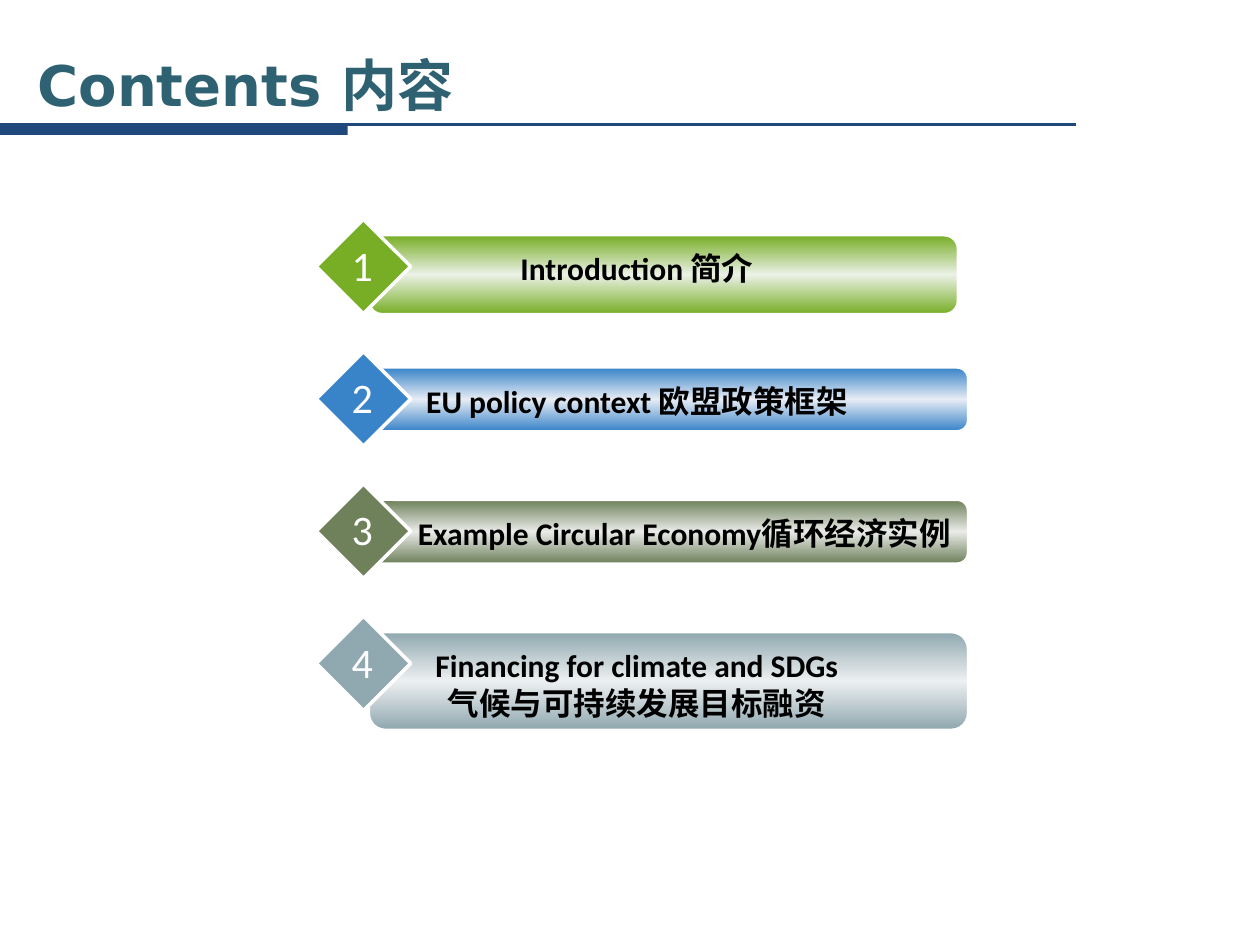
"""Build a contents slide with four numbered, colour-coded bars."""
from copy import deepcopy
from dataclasses import dataclass

from lxml.etree import SubElement
from pptx import Presentation
from pptx.dml.color import RGBColor
from pptx.enum.shapes import MSO_CONNECTOR as Conn, MSO_SHAPE as Shape
from pptx.enum.text import MSO_ANCHOR as Anchor, MSO_AUTO_SIZE as Fit, PP_ALIGN as Align
from pptx.oxml.ns import qn
from pptx.shapes.autoshape import Shape as AutoShape
from pptx.shapes.shapetree import GroupShapes, SlideShapes
from pptx.util import Inches, Pt


@dataclass(frozen=True)
class Theme:
    rule: str = "1F497D"
    title: str = "2E6272"
    ink: str = "000000"
    paper: str = "FFFFFF"
    title_font: str = "DejaVu Sans"
    body_font: str = "Calibri"
    title_size: int = 32
    number_size: int = 24
    label_size: int = 18


@dataclass(frozen=True)
class Style:
    font: str
    size: int
    color: str
    bold: bool = False


@dataclass(frozen=True)
class Topic:
    lines: tuple[str, ...]
    color: str
    glow: str
    bar_width: float = 4.75
    bar_height: float = 0.5
    label_width: float = 3.75
    label_height: float = 0.4


THEME = Theme()
TITLE = Style(THEME.title_font, THEME.title_size, THEME.title, True)
LABEL = Style(THEME.body_font, THEME.label_size, THEME.ink, True)
NUMBER = Style(THEME.body_font, THEME.number_size, THEME.paper)
FIRST_TOP, ROW_STEP = 1.74, 1.05
TOPICS = (
    Topic(("Introduction 简介",), "77AE26", "EBF1E6", bar_width=4.67, bar_height=0.62),
    Topic(("EU policy context 欧盟政策框架",), "3984C9", "E7ECF5"),
    Topic(("Example Circular Economy循环经济实例",), "6E815B", "EAEBE8", label_width=4.5),
    Topic(("Financing for climate and SDGs", "气候与可持续发展目标融资"),
          "90A8B0", "EDF0F1", bar_height=0.77, label_height=0.71),
)


def rgb(color: str) -> RGBColor:
    """Turn a hex string into a colour."""
    return RGBColor.from_string(color)


def add_box(shapes: GroupShapes, kind: Shape, left: float, top: float, width: float,
            height: float, color: str, outline: float = 0) -> AutoShape:
    """Add a solid shape with an optional paper-coloured outline in points."""
    sp = shapes.add_shape(kind, Inches(left), Inches(top), Inches(width), Inches(height))
    sp.shadow.inherit = False
    sp.fill.solid()
    sp.fill.fore_color.rgb = rgb(color)
    if outline:
        sp.line.color.rgb = rgb(THEME.paper)
        sp.line.width = Pt(outline)
    else:
        sp.line.fill.background()
    return sp


def add_glow(sp: AutoShape, edge: str, middle: str) -> None:
    """Fill a shape with a vertical gradient that is lightest in the middle."""
    sp.fill.gradient()
    sp.fill.gradient_angle = 90
    stop_list = next(sp._element.spPr.iter(qn("a:gsLst")))
    stop_list.insert(1, deepcopy(stop_list[0]))
    for stop, position, color in zip(sp.fill.gradient_stops, (0, 0.5, 1), (edge, middle, edge)):
        stop.position = position
        stop.color.rgb = rgb(color)


def add_text(shapes: GroupShapes | SlideShapes, lines: tuple[str, ...], left: float, top: float,
             width: float, height: float, style: Style, align: Align = Align.CENTER,
             anchor: Anchor = Anchor.TOP, wrap: bool = True, fit: Fit = Fit.SHAPE_TO_FIT_TEXT) -> None:
    """Add a text box with one paragraph per line."""
    tf = shapes.add_textbox(Inches(left), Inches(top), Inches(width), Inches(height)).text_frame
    tf.word_wrap = wrap
    tf.auto_size = fit
    tf.vertical_anchor = anchor
    for index, line in enumerate(lines):
        p = tf.paragraphs[0] if index == 0 else tf.add_paragraph()
        p.alignment = align
        r = p.add_run()
        r.text = line
        r.font.name = style.font
        r.font.size = Pt(style.size)
        r.font.bold = style.bold
        r.font.color.rgb = rgb(style.color)


def add_header_rule(shapes: GroupShapes) -> None:
    """Draw the thin rule and the thick bar below the title."""
    top = 0.99
    rule = shapes.add_connector(Conn.STRAIGHT, Inches(0), Inches(top), Inches(8.54), Inches(top))
    rule.line.color.rgb = rgb(THEME.rule)
    rule.line.width = Pt(1.5)
    SubElement(rule._element.spPr, qn("a:effectLst"))
    add_box(shapes, Shape.RECTANGLE, 0, top, 2.76, 0.08, THEME.rule)


def add_topic(shapes: GroupShapes, number: int, topic: Topic, top: float) -> None:
    """Draw one numbered diamond with its bar and label."""
    bar = add_box(shapes, Shape.ROUNDED_RECTANGLE, 2.93, top + 0.13,
                  topic.bar_width, topic.bar_height, topic.color, outline=1)
    add_glow(bar, topic.color, topic.glow)
    add_box(shapes, Shape.DIAMOND, 2.51, top, 0.75, 0.75, topic.color, outline=2)
    add_text(shapes, topic.lines, 3.18, top + 0.19, topic.label_width, topic.label_height, LABEL)
    add_text(shapes, (str(number),), 2.68, top + 0.11, 0.39, 0.5, NUMBER, wrap=False)


def main() -> None:
    """Build and save the slide."""
    prs = Presentation()
    prs.slide_width, prs.slide_height = Inches(10), Inches(7.5)
    s = prs.slides.add_slide(prs.slide_layouts[6])
    add_header_rule(s.shapes.add_group_shape().shapes)
    for index, topic in enumerate(TOPICS):
        group = s.shapes.add_group_shape()
        add_topic(group.shapes, index + 1, topic, FIRST_TOP + index * ROW_STEP)
    add_text(s.shapes, ("Contents 内容",), 0.2, 0.36, 8.42, 0.62, TITLE,
             align=Align.LEFT, anchor=Anchor.MIDDLE, fit=Fit.NONE)
    prs.save("out.pptx")


if __name__ == "__main__":
    main()
